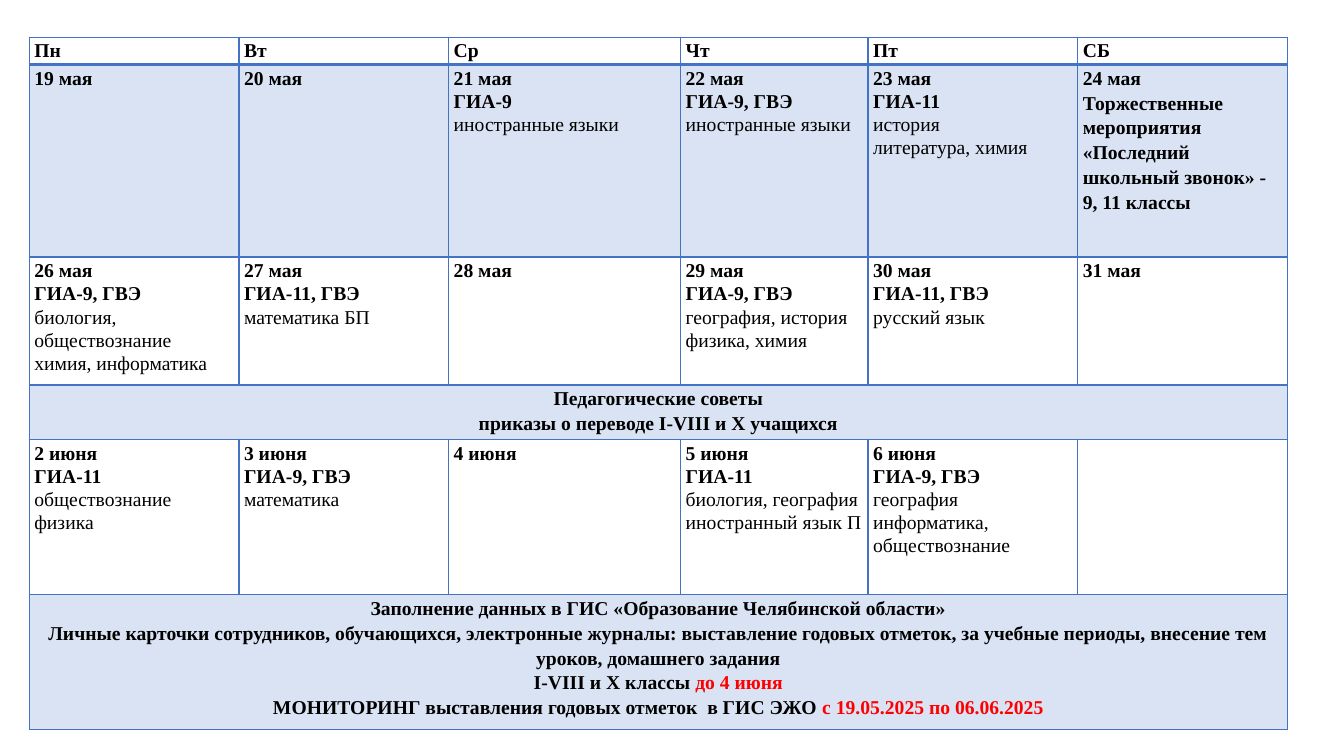
from lxml import etree
from pptx import Presentation
from pptx.dml.color import RGBColor
from pptx.enum.text import PP_ALIGN
from pptx.oxml.ns import qn
from pptx.util import Inches, Pt

CENTER, LEFT = PP_ALIGN.CENTER, PP_ALIGN.LEFT

# Content: each day holds a date, an exam or event, then subjects
WEEKDAYS = [("Пн",), ("Вт",), ("Ср",), ("Чт",), ("Пт",), ("СБ",)]
FIRST_WEEK = [
    ("19 мая",),
    ("20 мая",),
    ("21 мая", "ГИА-9", "иностранные языки"),
    ("22 мая", "ГИА-9, ГВЭ", "иностранные языки"),
    ("23 мая", "ГИА-11", "история", "литература, химия"),
    ("24 мая", "Торжественные мероприятия «Последний школьный звонок» - 9, 11 классы"),
]
SECOND_WEEK = [
    ("26 мая", "ГИА-9, ГВЭ", "биология, обществознание", "химия, информатика"),
    ("27 мая", "ГИА-11, ГВЭ", "математика БП"),
    ("28 мая",),
    ("29 мая", "ГИА-9, ГВЭ", "география, история", "физика, химия"),
    ("30 мая", "ГИА-11, ГВЭ", "русский язык"),
    ("31 мая",),
]
THIRD_WEEK = [
    ("2 июня", "ГИА-11", "обществознание", "физика"),
    ("3 июня", "ГИА-9, ГВЭ", "математика"),
    ("4 июня",),
    ("5 июня", "ГИА-11", "биология, география", "иностранный язык П"),
    ("6 июня", "ГИА-9, ГВЭ", "география", "информатика, обществознание"),
    (),
]
# Full-width notes: (text, deadline in red)
COUNCILS = [
    ("Педагогические советы", ""),
    ("приказы о переводе I-VIII и X учащихся", ""),
]
REPORTING = [
    ("Заполнение данных в ГИС «Образование Челябинской области»", ""),
    ("Личные карточки сотрудников, обучающихся, электронные журналы: выставление "
     "годовых отметок, за учебные периоды, внесение тем уроков, домашнего задания", ""),
    ("I-VIII и X классы ", "до 4 июня"),
    ("МОНИТОРИНГ выставления годовых отметок  в ГИС ЭЖО ", "с 19.05.2025 по 06.06.2025"),
]

# Rows: (kind, content, height, shaded)
ROWS = [
    ("days", WEEKDAYS, 0.27, False),
    ("days", FIRST_WEEK, 1.91, True),
    ("days", SECOND_WEEK, 1.27, False),
    ("note", COUNCILS, 0.54, True),
    ("days", THIRD_WEEK, 1.54, False),
    ("note", REPORTING, 1.34, True),
]
COLUMN_WIDTHS = [2.08, 2.08, 2.3, 1.86, 2.08, 2.08]
LEFT_EDGE, TOP_EDGE = 0.29, 0.37
COLORS = {"border": "4472C4", "shade": "DAE3F3", "text": "000000", "deadline": "FF0000"}
FONT, SIZE = "Times New Roman", 14
DATE_SPACING, EXAM_SPACING = 1.15, 1.07


def rgb(name):
    return RGBColor.from_string(COLORS[name])


def set_borders(cell, row):
    properties = cell._tc.get_or_add_tcPr()
    widths = {"a:lnL": 1, "a:lnR": 1, "a:lnT": 2 if row == 1 else 1, "a:lnB": 2 if row == 0 else 1}
    for tag, width in widths.items():
        line = etree.SubElement(properties, qn(tag), w=str(Pt(width)))
        fill = etree.SubElement(line, qn("a:solidFill"))
        etree.SubElement(fill, qn("a:srgbClr"), val=COLORS["border"])


def write_paragraph(cell, index, runs, bold, spacing, alignment):
    frame = cell.text_frame
    paragraph = frame.paragraphs[0] if index == 0 else frame.add_paragraph()
    paragraph.alignment = alignment
    paragraph.line_spacing = spacing
    paragraph.font.name, paragraph.font.size, paragraph.font.bold = FONT, Pt(SIZE), bold
    for text, color in runs:
        if text:
            run = paragraph.add_run()
            run.text = text
            run.font.color.rgb = rgb(color)


def write_day(cell, lines):
    spacing = EXAM_SPACING if lines[1:] and lines[1].startswith("ГИА") else DATE_SPACING
    for index, text in enumerate(lines):
        write_paragraph(cell, index, [(text, "text")], index < 2,
                        spacing if index else DATE_SPACING, LEFT)


def write_note(cell, lines):
    for index, (text, deadline) in enumerate(lines):
        write_paragraph(cell, index, [(text, "text"), (deadline, "deadline")], True,
                        DATE_SPACING, CENTER)


presentation = Presentation()
presentation.slide_width, presentation.slide_height = Inches(13.33), Inches(7.5)
slide = presentation.slides.add_slide(presentation.slide_layouts[6])

# Calendar grid
shape = slide.shapes.add_table(
    len(ROWS), len(COLUMN_WIDTHS), Inches(LEFT_EDGE), Inches(TOP_EDGE),
    Inches(sum(COLUMN_WIDTHS)), Inches(sum(height for _, _, height, _ in ROWS)))
table = shape.table
table.first_row = table.horz_banding = False
for column, width in zip(table.columns, COLUMN_WIDTHS):
    column.width = Inches(width)

# Rows of days and full-width notes
for row, (kind, content, height, shaded) in enumerate(ROWS):
    table.rows[row].height = Inches(height)
    cells = list(table.rows[row].cells)
    for cell in cells:
        cell.margin_left = cell.margin_right = Inches(0.05)
        cell.margin_top = cell.margin_bottom = 0
        set_borders(cell, row)
        if shaded:
            cell.fill.solid()
            cell.fill.fore_color.rgb = rgb("shade")
        else:
            cell.fill.background()
    if kind == "note":
        cells[0].merge(cells[-1])
        write_note(cells[0], content)
    else:
        for cell, lines in zip(cells, content):
            write_day(cell, lines)

presentation.save("out.pptx")
